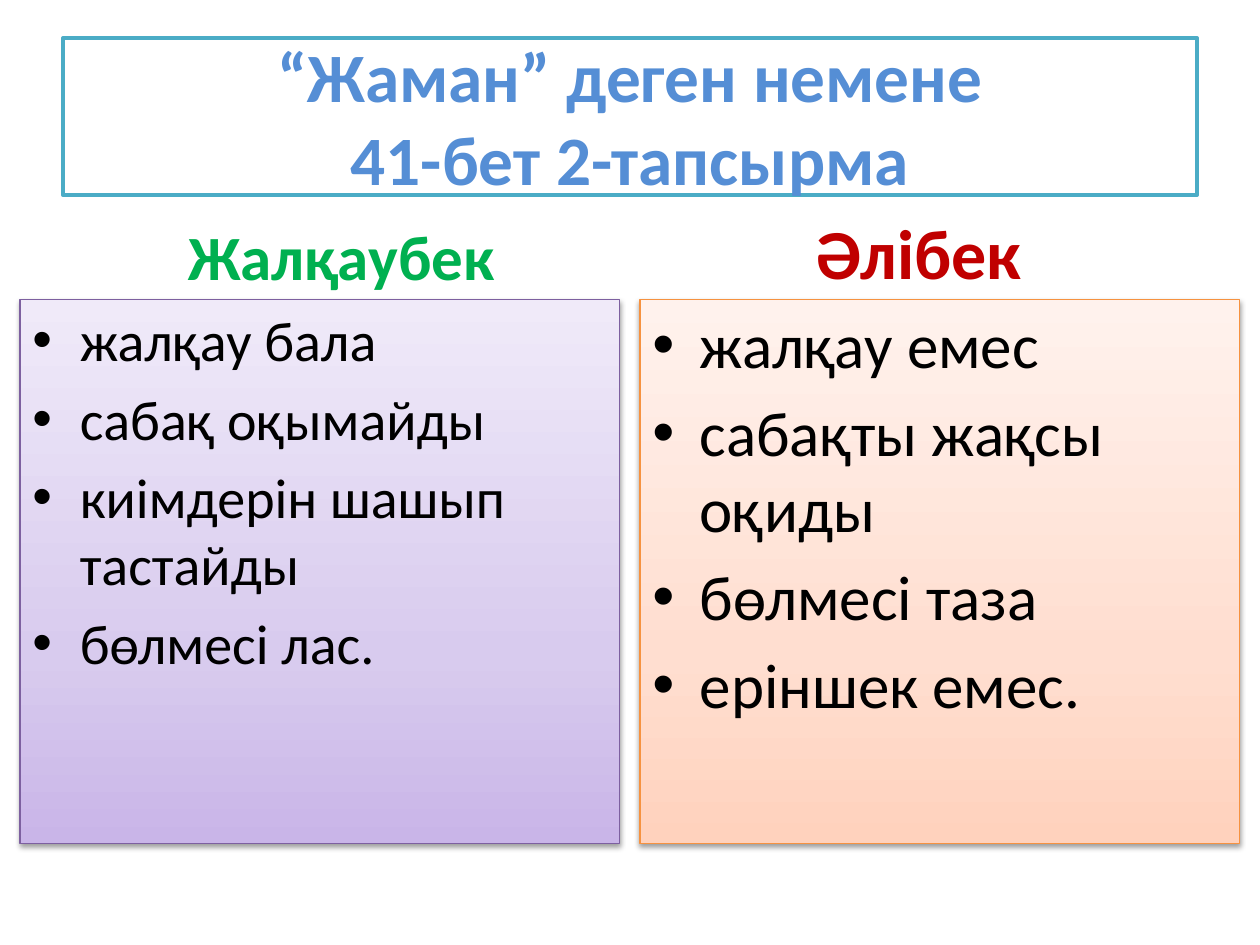
from lxml import etree
from pptx import Presentation
from pptx.dml.color import RGBColor
from pptx.enum.shapes import MSO_SHAPE
from pptx.enum.text import MSO_ANCHOR, PP_ALIGN
from pptx.oxml.ns import qn
from pptx.util import Inches, Pt

RECTANGLE = MSO_SHAPE.RECTANGLE
CENTER, LEFT = PP_ALIGN.CENTER, PP_ALIGN.LEFT
TOP, MIDDLE, BOTTOM = MSO_ANCHOR.TOP, MSO_ANCHOR.MIDDLE, MSO_ANCHOR.BOTTOM

WHITE = RGBColor(0xFF, 0xFF, 0xFF)
BLACK = RGBColor(0x00, 0x00, 0x00)
TEAL = RGBColor(0x4B, 0xAC, 0xC6)
BLUE = RGBColor(0x55, 0x8E, 0xD5)
GREEN = RGBColor(0x00, 0xB0, 0x50)
RED = RGBColor(0xC0, 0x00, 0x00)
PURPLE = RGBColor(0x7D, 0x60, 0xA0)
ORANGE = RGBColor(0xF6, 0x92, 0x40)
LILACS = [RGBColor(0xC9, 0xB5, 0xE8), RGBColor(0xD8, 0xCB, 0xEE), RGBColor(0xF0, 0xEA, 0xF9)]
PEACHES = [RGBColor(0xFF, 0xD2, 0xBD), RGBColor(0xFF, 0xDE, 0xD0), RGBColor(0xFF, 0xF2, 0xED)]

FONT = "Calibri"
WIDTH, HEIGHT = Inches(10), Inches(7.5)
MARGIN = 0.05 * WIDTH
TITLE_TOP, TITLE_HEIGHT = 0.04 * HEIGHT, HEIGHT / 6
COLUMN_TOP, HEADING_HEIGHT = 0.224 * HEIGHT, 0.093 * HEIGHT
LIST_HEIGHT = 0.576 * HEIGHT
GUTTER = 0.016 * WIDTH
LIST_WIDTH = (WIDTH - 3 * GUTTER) / 2
HEADING_WIDTH = 0.442 * WIDTH
INDENT = Inches(0.375)


def add_element(parent, tag, **attributes):
    values = {name: str(value) for name, value in attributes.items()}
    return etree.SubElement(parent, qn(tag), values)


def add_box(slide, box, anchor):
    shape = slide.shapes.add_shape(RECTANGLE, *(round(length) for length in box))
    shape.shadow.inherit = False
    shape.fill.background()
    shape.line.fill.background()
    shape.text_frame.word_wrap = True
    shape.text_frame.vertical_anchor = anchor
    return shape


def set_outline(shape, color, width):
    shape.line.color.rgb = color
    shape.line.width = Pt(width)


def add_run(paragraph, text, size, color, bold=False):
    run = paragraph.add_run()
    run.text = text
    run.font.name = FONT
    run.font.size = Pt(size)
    run.font.bold = bold
    run.font.color.rgb = color


def set_space_before(paragraph):
    properties = paragraph._p.get_or_add_pPr()
    add_element(add_element(properties, "a:spcBef"), "a:spcPct", val=20000)
    return properties


def add_bullet(paragraph):
    properties = set_space_before(paragraph)
    properties.set("marL", str(INDENT))
    properties.set("indent", str(-INDENT))
    add_element(properties, "a:buFont", typeface="Arial")
    add_element(properties, "a:buChar", char="•")


def set_gradient(shape, colors):
    shape.fill.gradient()
    gradient = shape._element.spPr.find(qn("a:gradFill"))
    stops = gradient.find(qn("a:gsLst"))
    for stop in list(stops):
        stops.remove(stop)
    for position, color in zip((0, 35000, 100000), colors):
        add_element(add_element(stops, "a:gs", pos=position), "a:srgbClr", val=color)
    shape.fill.gradient_angle = 90


def set_shadow(shape):
    effects = shape._element.spPr.find(qn("a:effectLst"))
    shadow = add_element(effects, "a:outerShdw", blurRad=Pt(3.1), dist=Pt(1.6),
                         dir=5400000, rotWithShape=0)
    color = add_element(shadow, "a:srgbClr", val=BLACK)
    add_element(color, "a:alpha", val=38000)


def add_title(slide, box, lines):
    shape = add_box(slide, box, MIDDLE)
    shape.fill.solid()
    shape.fill.fore_color.rgb = WHITE
    set_outline(shape, TEAL, 2)
    paragraph = shape.text_frame.paragraphs[0]
    paragraph.alignment = CENTER
    for index, line in enumerate(lines):
        if index:
            paragraph.add_line_break()
        add_run(paragraph, line, 39.6, BLUE, True)


def add_heading(slide, box, text, size, color):
    paragraph = add_box(slide, box, BOTTOM).text_frame.paragraphs[0]
    paragraph.alignment = CENTER
    set_space_before(paragraph)
    add_run(paragraph, text, size, color, True)


def add_list(slide, box, items, size, gradient, outline):
    shape = add_box(slide, box, TOP)
    set_gradient(shape, gradient)
    set_outline(shape, outline, 0.75)
    set_shadow(shape)
    frame = shape.text_frame
    for index, item in enumerate(items):
        paragraph = frame.add_paragraph() if index else frame.paragraphs[0]
        paragraph.alignment = LEFT
        add_bullet(paragraph)
        add_run(paragraph, item, size, BLACK)


def main():
    presentation = Presentation()
    presentation.slide_width, presentation.slide_height = WIDTH, HEIGHT
    slide = presentation.slides.add_slide(presentation.slide_layouts[6])

    add_title(slide, (MARGIN, TITLE_TOP, WIDTH - 2 * MARGIN, TITLE_HEIGHT),
              ["“Жаман” деген немене", "41-бет 2-тапсырма"])

    left, right = GUTTER, 2 * GUTTER + LIST_WIDTH
    columns = [
        (left, MARGIN, ("Жалқаубек", 36, GREEN),
         (["жалқау бала", "сабақ оқымайды", "киімдерін шашып тастайды", "бөлмесі лас."],
          32, LILACS, PURPLE)),
        (right, right, ("Әлібек", 40, RED),
         (["жалқау емес", "сабақты жақсы оқиды", "бөлмесі таза", "еріншек емес."],
          36, PEACHES, ORANGE)),
    ]
    for list_left, heading_left, heading, content in columns:
        add_heading(slide, (heading_left, COLUMN_TOP, HEADING_WIDTH, HEADING_HEIGHT), *heading)
        add_list(slide, (list_left, COLUMN_TOP + HEADING_HEIGHT, LIST_WIDTH, LIST_HEIGHT), *content)

    presentation.save("out.pptx")


if __name__ == "__main__":
    main()
